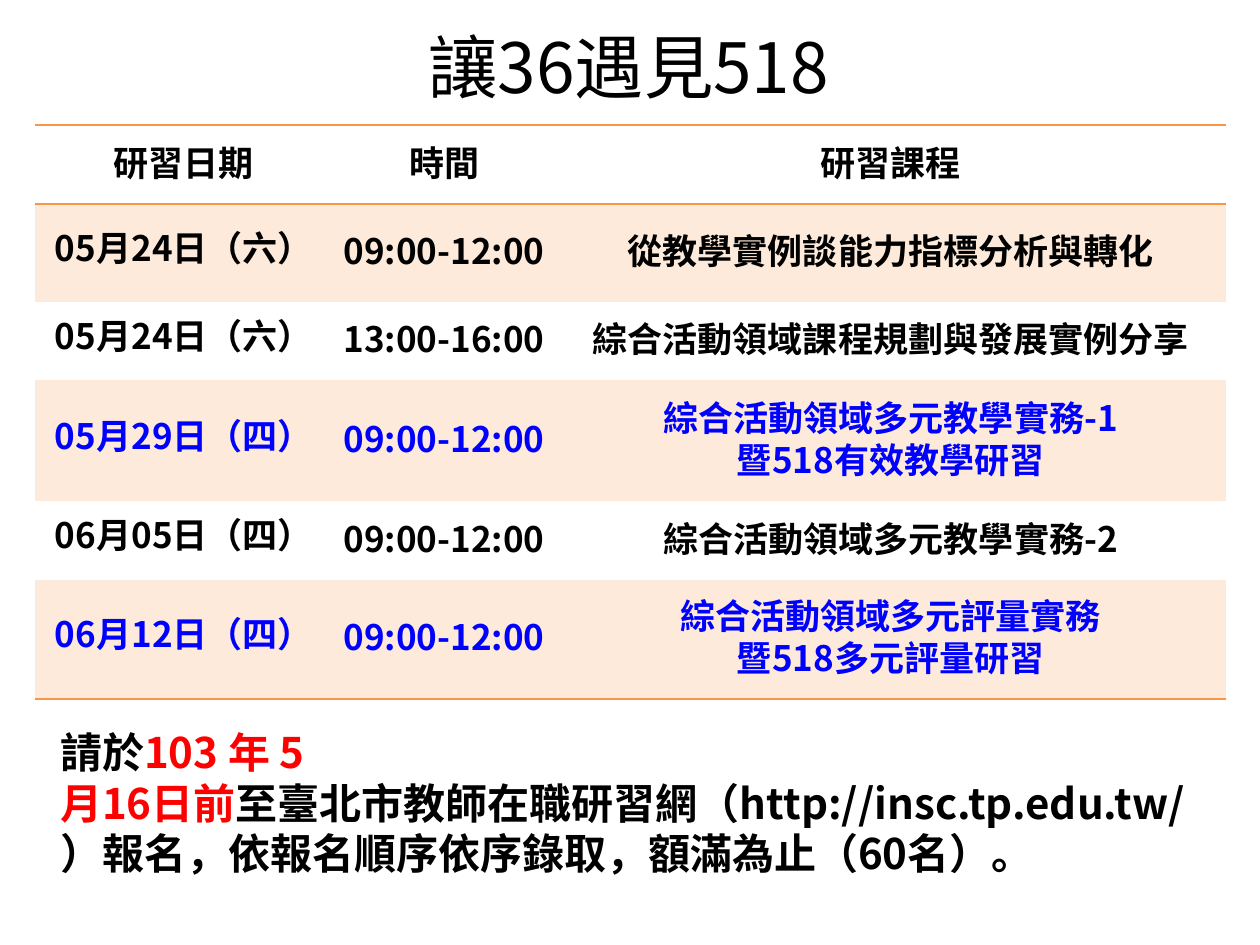
from lxml.etree import SubElement
from pptx import Presentation
from pptx.dml.color import RGBColor
from pptx.enum.text import MSO_ANCHOR, MSO_AUTO_SIZE, PP_ALIGN
from pptx.oxml.ns import qn
from pptx.util import Inches, Pt

FONT = "Noto Sans CJK SC"
NO_STYLE = "{2D5ABB26-0587-4C30-8999-92F81FD0307C}"
COLORS = {"text": "000000", "special": "0000FF", "deadline": "FF0000",
          "rule": "F79646", "band": "FDEADA"}
COL_WIDTHS = [2.36, 1.77, 5.32]
ROW_HEIGHTS = [0.63, 0.78, 0.62, 0.96, 0.62, 0.95]
SCHEDULE = [
    ("研習日期", "時間", "研習課程"),
    ("05月24日（六）", "09:00-12:00", "從教學實例談能力指標分析與轉化"),
    ("05月24日（六）", "13:00-16:00", "綜合活動領域課程規劃與發展實例分享"),
    ("05月29日（四）", "09:00-12:00", "綜合活動領域多元教學實務-1\n暨518有效教學研習"),
    ("06月05日（四）", "09:00-12:00", "綜合活動領域多元教學實務-2"),
    ("06月12日（四）", "09:00-12:00", "綜合活動領域多元評量實務\n暨518多元評量研習"),
]
SPECIAL_ROWS = (3, 5)
NOTICE = [
    ("請於", "text"),
    ("103 年 5 月16日前", "deadline"),
    ("至臺北市教師在職研習網（http://insc.tp.edu.tw/）報名，"
     "依報名順序依序錄取，額滿為止（60名）。", "text"),
]


def add_run(p, text, size, color="text", bold=True):
    r = p.add_run()
    r.text = text
    r.font.size = Pt(size)
    r.font.bold = bold
    r.font.name = FONT
    r.font.color.rgb = RGBColor.from_string(COLORS[color])
    SubElement(r.font._element, qn("a:ea"), typeface=FONT)


def add_title(s, text):
    title = s.shapes.title
    title.left, title.top = Inches(0.49), Inches(0.13)
    title.width, title.height = Inches(9), Inches(0.79)
    tf = title.text_frame
    tf.vertical_anchor = MSO_ANCHOR.MIDDLE
    p = tf.paragraphs[0]
    p.alignment = PP_ALIGN.CENTER
    add_run(p, text, 39.6, bold=False)


def set_borders(cell, sides):
    """Rule the given sides ("T", "B"); call before the cell is filled."""
    tc_pr = cell._tc.get_or_add_tcPr()
    for side in sides:
        ln = SubElement(tc_pr, qn(f"a:ln{side}"), w=str(Pt(1)))
        fill = SubElement(ln, qn("a:solidFill"))
        SubElement(fill, qn("a:srgbClr"), val=COLORS["rule"])


def format_cell(cell, text, color, spacing, sides, banded):
    cell.margin_left = cell.margin_right = Inches(0.02)
    cell.margin_top, cell.margin_bottom = Inches(0.01), 0
    cell.vertical_anchor = MSO_ANCHOR.MIDDLE
    set_borders(cell, sides)
    if banded:
        cell.fill.solid()
        cell.fill.fore_color.rgb = RGBColor.from_string(COLORS["band"])
    else:
        cell.fill.background()
    tf = cell.text_frame
    for i, line in enumerate(text.split("\n")):
        p = tf.add_paragraph() if i else tf.paragraphs[0]
        p.alignment = PP_ALIGN.CENTER
        p.line_spacing = Pt(spacing)
        add_run(p, line, 20, color)


def add_schedule(s):
    table = s.shapes.add_table(
        len(SCHEDULE), len(COL_WIDTHS), Inches(0.28), Inches(0.99),
        Inches(sum(COL_WIDTHS)), Inches(sum(ROW_HEIGHTS))).table
    table._tbl.tblPr.find(qn("a:tableStyleId")).text = NO_STYLE
    table.first_row = table.horz_banding = False
    for column, width in zip(table.columns, COL_WIDTHS):
        column.width = Inches(width)
    last = len(SCHEDULE) - 1
    for i, values in enumerate(SCHEDULE):
        table.rows[i].height = Inches(ROW_HEIGHTS[i])
        color = "special" if i in SPECIAL_ROWS else "text"
        sides = {0: "TB", last: "B"}.get(i, "")
        for j, text in enumerate(values):
            spacing = 20 if i and j == 0 else 24
            format_cell(table.cell(i, j), text, color, spacing, sides, i % 2 == 1)


def add_notice(s):
    tf = s.shapes.add_textbox(Inches(0.38), Inches(5.72),
                              Inches(9.13), Inches(1.31)).text_frame
    tf.word_wrap = True
    tf.auto_size = MSO_AUTO_SIZE.SHAPE_TO_FIT_TEXT
    for text, color in NOTICE:
        add_run(tf.paragraphs[0], text, 24, color)


def main():
    prs = Presentation()
    prs.slide_width, prs.slide_height = Inches(10), Inches(7.5)
    s = prs.slides.add_slide(prs.slide_layouts[5])
    add_title(s, "讓36遇見518")
    add_schedule(s)
    add_notice(s)
    prs.save("out.pptx")


if __name__ == "__main__":
    main()
